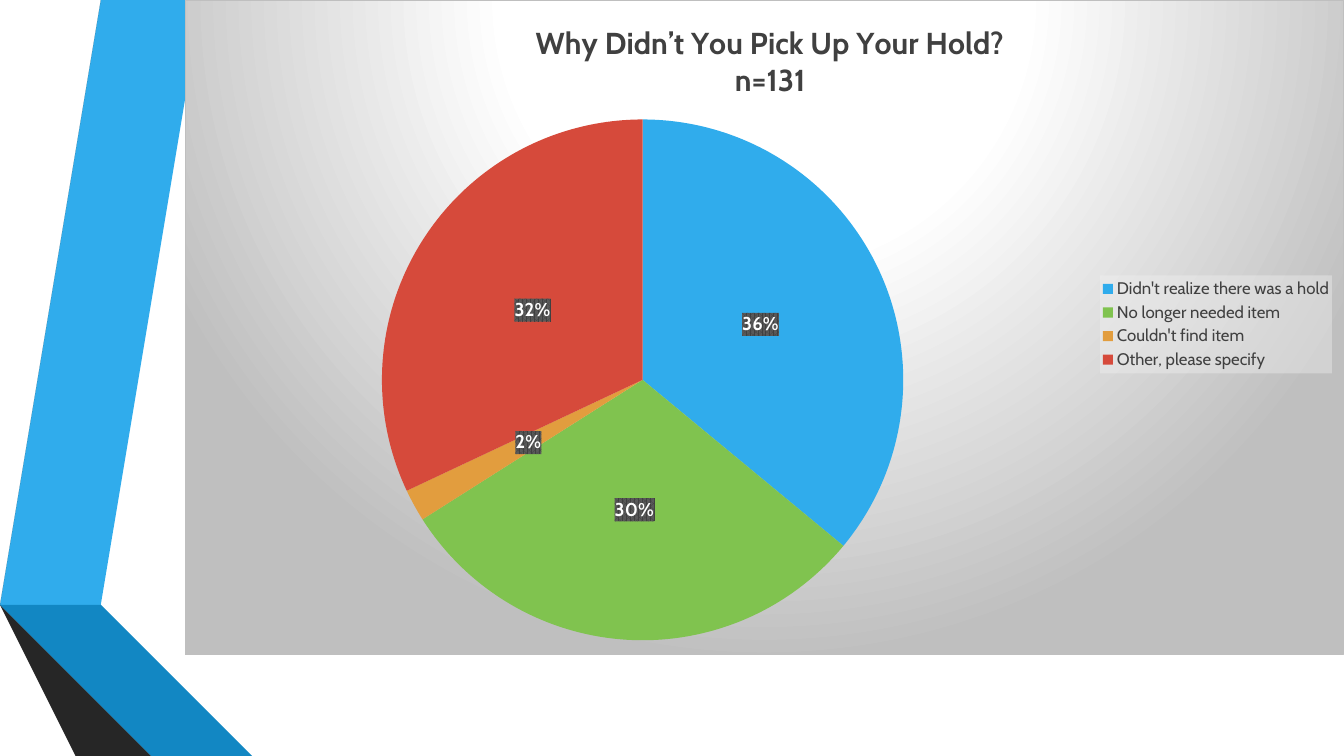
from dataclasses import dataclass

from lxml import etree
from pptx import Presentation
from pptx.chart.data import CategoryChartData
from pptx.dml.color import RGBColor as RGB
from pptx.enum.chart import XL_CHART_TYPE as Kind
from pptx.enum.chart import XL_LABEL_POSITION as Spot
from pptx.enum.chart import XL_LEGEND_POSITION as Side
from pptx.oxml import parse_xml
from pptx.oxml.ns import nsdecls, qn
from pptx.util import Inches, Pt


@dataclass(frozen=True)
class Theme:
    font: str = "Cabin"
    ink: str = "404040"
    light: str = "FFFFFF"
    edge: str = "BFBFBF"
    pale: str = "F2F2F2"
    weave: str = "595959"
    title: float = 21.6
    label: float = 13.3
    key: float = 12


THEME = Theme()
WIDE, HIGH = 13.33, 7.5

# Ribbon folds: colour and corners, in inches from the corner of the box
FOLDS = [
    ("30ACEC", [(0.5, 5.78), (0.77, 5.83), (1.73, 0), (1.45, 0)]),
    ("595959", [(1.39, 0), (1.11, 0), (0.16, 5.73), (0.44, 5.77)]),
    ("262626", [(0.16, 5.73), (1.45, 7.5), (1.51, 7.5)]),
    ("0C5A82", [(0.5, 5.79), (2.08, 7.5), (2.14, 7.5)]),
    ("1287C3", [(0.5, 5.79), (2.14, 7.5), (2.83, 7.5), (0.77, 5.83), (0.5, 5.78)]),
    ("404040", [(2.02, 7.5), (0.48, 5.83), (0.43, 5.77), (0.16, 5.73), (1.51, 7.5)]),
]

TITLE = ["Why Didn’t You Pick Up Your Hold?", "n=131"]
REASONS = [
    ("Didn't realize there was a hold", 36, "30ACEC"),
    ("No longer needed item", 30, "80C34F"),
    ("Couldn't find item", 2, "E29D3E"),
    ("Other, please specify", 32, "D64A3B"),
]


def paint(fill, tone):
    fill.solid()
    fill.fore_color.rgb = RGB.from_string(tone)


def style(font, size, tone, bold=False):
    font.name, font.size, font.bold = THEME.font, Pt(size), bold
    font.color.rgb = RGB.from_string(tone)


def look(inner):
    """Wrap fill and line markup as chart shape properties."""
    return parse_xml(f'<c:spPr {nsdecls("c", "a")}>{inner}</c:spPr>')


def tone_xml(tone, extra=""):
    return f'<a:srgbClr val="{tone}">{extra}</a:srgbClr>'


def place(part, inner=False, **spots):
    """Fix a chart part at shares of the chart's size."""
    for old in part.findall(qn("c:layout")):
        part.remove(old)
    layout = parse_xml(f'<c:layout {nsdecls("c")}><c:manualLayout/></c:layout>')
    rules = [("layoutTarget", "inner")] if inner else []
    rules += [("xMode", "edge"), ("yMode", "edge"), *spots.items()]
    for name, value in rules:
        etree.SubElement(layout[0], qn(f"c:{name}")).set("val", str(value))
    over = part.find(qn("c:overlay"))
    if over is None:
        part.insert(0, layout)
    else:
        over.addprevious(layout)


def ribbon(slide, box):
    left, top = (Inches(n) for n in box[:2])
    for tone, spots in FOLDS:
        pen = slide.shapes.build_freeform(*spots[0], scale=Inches(1))
        pen.add_line_segments(spots[1:], close=True)
        fold = pen.convert_to_shape(left, top)
        fold.shadow.inherit = False
        paint(fold.fill, tone)
        fold.line.fill.background()


def head(chart):
    frame = chart.chart_title.text_frame
    frame.text = "\n".join(TITLE)
    for para in frame.paragraphs:
        style(para.font, THEME.title, THEME.ink, True)
    chart.chart_title.include_in_layout = False
    place(chart.chart_title._element, x=0.3, y=0.03)


def legend(chart):
    chart.has_legend = True
    key = chart.legend
    key.position, key.include_in_layout = Side.RIGHT, False
    style(key.font, THEME.key, THEME.ink)
    place(key._element, x=0.79, y=0.42, w=0.2, h=0.15)
    glass = tone_xml(THEME.pale, '<a:alpha val="39000"/>')
    key._element.find(qn("c:overlay")).addnext(
        look(f"<a:solidFill>{glass}</a:solidFill><a:ln><a:noFill/></a:ln>"))


def slices(chart):
    plot = chart.plots[0]
    plot.vary_by_categories = True
    for i, (_, _, tone) in enumerate(REASONS):
        part = plot.series[0].points[i].format
        paint(part.fill, tone)
        part.line.fill.background()
    tags = plot.series[0].data_labels
    tags.show_percentage, tags.show_value = True, False
    tags.number_format, tags.number_format_is_linked = "0%", False
    tags.position = Spot.CENTER
    style(tags.font, THEME.label, THEME.light, True)
    tags._element.find(qn("c:txPr")).addprevious(look(
        f'<a:pattFill prst="pct75"><a:fgClr>{tone_xml(THEME.ink)}</a:fgClr>'
        f"<a:bgClr>{tone_xml(THEME.weave)}</a:bgClr></a:pattFill>"))


def backdrop(chart):
    stops = [(0, THEME.light), (39, THEME.light), (100, THEME.edge)]
    marks = "".join(f'<a:gs pos="{at * 1000}">{tone_xml(tone)}</a:gs>'
                    for at, tone in stops)
    chart._chartSpace.find(qn("c:chart")).addnext(look(
        f'<a:gradFill><a:gsLst>{marks}</a:gsLst><a:path path="circle">'
        '<a:fillToRect l="50000" t="-80000" r="50000" b="180000"/></a:path>'
        f'</a:gradFill><a:ln w="{Pt(0.75)}"><a:solidFill>{tone_xml(THEME.edge)}'
        "</a:solidFill></a:ln>"))


def pie(slide, box):
    data = CategoryChartData()
    data.categories = [name for name, _, _ in REASONS]
    data.add_series("Series 1", [share for _, share, _ in REASONS])
    spot = [Inches(n) for n in box]
    chart = slide.shapes.add_chart(Kind.PIE, *spot, data).chart
    style(chart.font, 10, "000000")
    head(chart)
    legend(chart)
    slices(chart)
    place(chart._chartSpace.find(f'.//{qn("c:plotArea")}'), inner=True,
          x=0.17, y=0.18, w=0.45, h=0.8)
    backdrop(chart)


def main():
    deck = Presentation()
    deck.slide_width, deck.slide_height = Inches(WIDE), Inches(HIGH)
    slide = deck.slides.add_slide(deck.slide_layouts[6])
    ribbon(slide, (0, 0, 2.83, HIGH))
    pie(slide, (1.83, 0, WIDE - 1.83, 6.5))
    deck.save("out.pptx")


if __name__ == "__main__":
    main()
